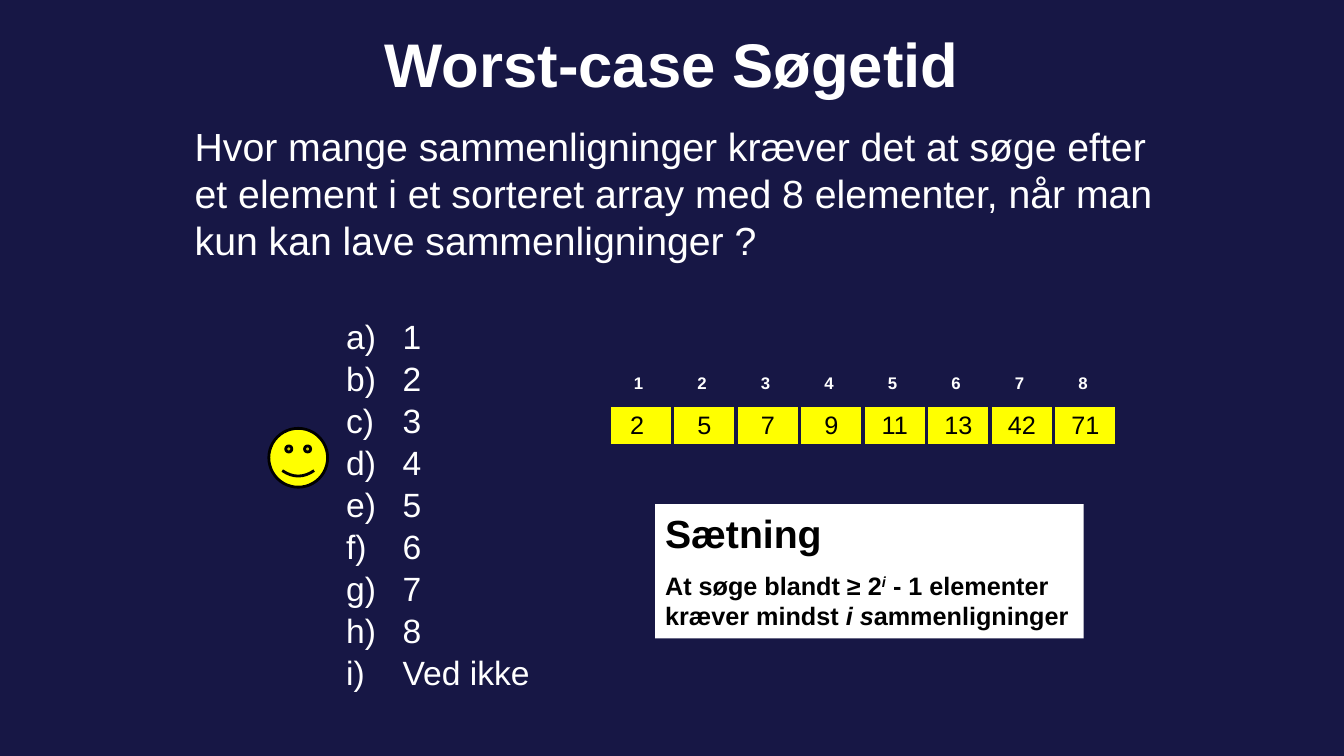
"""Build the slide on worst-case search time in a sorted array."""
import lxml.etree
import pptx
import pptx.dml.color
import pptx.enum.shapes
import pptx.enum.text
import pptx.oxml.ns
import pptx.util

NAVY = pptx.dml.color.RGBColor(0x17, 0x17, 0x45)
WHITE = pptx.dml.color.RGBColor(0xFF, 0xFF, 0xFF)
BLACK = pptx.dml.color.RGBColor(0x00, 0x00, 0x00)
YELLOW = pptx.dml.color.RGBColor(0xFF, 0xFF, 0x00)

WIDTH = pptx.util.Inches(13.33)
HEIGHT = pptx.util.Inches(7.5)
ROW = HEIGHT / 90
COLUMN = WIDTH / 160
QUESTION = (
    "Hvor mange sammenligninger kræver det at søge efter et element i et "
    "sorteret array med 8 elementer, når man kun kan lave sammenligninger ?"
)
ANSWERS = ["1", "2", "3", "4", "5", "6", "7", "8", "Ved ikke"]
ARRAY = [
    ["1 ", "2 ", "3 ", "4 ", "5 ", "6 ", "7 ", "8 "],
    ["2 ", "5", "7", "9", "11", "13", "42", "71"],
]
THEOREM = [
    ("At søge blandt ≥ 2", False, False),
    ("i", True, True),
    (" - 1 elementer kræver mindst ", False, False),
    ("i s", True, False),
    ("ammenligninger", False, False),
]


def grid(left, top, width, height):
    return (round(left * COLUMN), round(top * ROW),
            round(width * COLUMN), round(height * ROW))


def style(paragraph, size, color, bold=False, align=pptx.enum.text.PP_ALIGN.LEFT):
    paragraph.alignment = align
    paragraph.font.name = "Arial"
    paragraph.font.size = pptx.util.Pt(size)
    paragraph.font.bold = bold
    paragraph.font.color.rgb = color


presentation = pptx.Presentation()
presentation.slide_width = WIDTH
presentation.slide_height = HEIGHT
slide = presentation.slides.add_slide(presentation.slide_layouts[1])
slide.background.fill.solid()
slide.background.fill.fore_color.rgb = NAVY
center = pptx.enum.text.PP_ALIGN.CENTER
middle = pptx.enum.text.MSO_ANCHOR.MIDDLE

title = slide.shapes.title
title.left, title.top, title.width, title.height = grid(20, 0, 120, 15)
title.text_frame.text = "Worst-case Søgetid"
title.text_frame.auto_size = pptx.enum.text.MSO_AUTO_SIZE.NONE
title.text_frame.vertical_anchor = middle
style(title.text_frame.paragraphs[0], 44, WHITE, True, center)

answers = slide.placeholders[1]
answers.left, answers.top, answers.width, answers.height = grid(40, 37, 27, 45)
answers.text_frame.text = "\n".join(ANSWERS)
answers.text_frame.auto_size = pptx.enum.text.MSO_AUTO_SIZE.NONE
for paragraph in answers.text_frame.paragraphs:
    style(paragraph, 24, WHITE)
    paragraph.space_before = pptx.util.Pt(1.2)
    properties = paragraph._p.get_or_add_pPr()
    properties.set("marL", str(pptx.util.Inches(0.56)))
    properties.set("indent", str(-pptx.util.Inches(0.56)))
    lxml.etree.SubElement(
        properties, pptx.oxml.ns.qn("a:buFont"), typeface="+mj-lt")
    lxml.etree.SubElement(
        properties, pptx.oxml.ns.qn("a:buAutoNum"), type="alphaLcParenR")

smiley = slide.shapes.add_shape(
    pptx.enum.shapes.MSO_SHAPE.SMILEY_FACE, *grid(32, 51, 7, 7))
smiley.shadow.inherit = False
smiley.fill.solid()
smiley.fill.fore_color.rgb = YELLOW
smiley.line.color.rgb = BLACK
smiley.line.width = pptx.util.Pt(2)

question = slide.shapes.add_textbox(*grid(22, 14, 118, 16))
question.text_frame.word_wrap = True
question.text_frame.text = QUESTION
style(question.text_frame.paragraphs[0], 28, WHITE)

array = slide.shapes.add_table(
    2, len(ARRAY[0]), *grid(72.5, 43.2, 60.5, 9.84)).table
array.horz_banding = False
array.rows[0].height = pptx.util.Inches(0.42)
array.rows[1].height = pptx.util.Inches(0.4)
for row, values in enumerate(ARRAY):
    for column, value in enumerate(values):
        cell = array.cell(row, column)
        cell.text = value
        cell.vertical_anchor = middle
        paragraph = cell.text_frame.paragraphs[0]
        properties = cell._tc.get_or_add_tcPr()
        for side in ("lnL", "lnR", "lnT", "lnB"):
            border = lxml.etree.SubElement(
                properties, pptx.oxml.ns.qn("a:" + side), w=str(pptx.util.Pt(3)))
            fill = lxml.etree.SubElement(border, pptx.oxml.ns.qn("a:solidFill"))
            lxml.etree.SubElement(
                fill, pptx.oxml.ns.qn("a:srgbClr"), val=str(NAVY))
        if row == 0:
            cell.fill.background()
            style(paragraph, 12, WHITE, True, center)
        else:
            cell.fill.solid()
            cell.fill.fore_color.rgb = YELLOW
            style(paragraph, 18, BLACK, False, center)

theorem = slide.shapes.add_shape(
    pptx.enum.shapes.MSO_SHAPE.RECTANGLE, *grid(78, 60, 51, 16))
theorem.shadow.inherit = False
theorem.fill.solid()
theorem.fill.fore_color.rgb = WHITE
theorem.line.fill.background()
theorem.text_frame.word_wrap = True
theorem.text_frame.vertical_anchor = pptx.enum.text.MSO_ANCHOR.TOP
theorem.text_frame.text = "Sætning"
style(theorem.text_frame.paragraphs[0], 28, BLACK, True)
statement = theorem.text_frame.add_paragraph()
style(statement, 18, BLACK, True)
statement.space_before = pptx.util.Pt(10)
for text, italic, raised in THEOREM:
    run = statement.add_run()
    run.text = text
    run.font.italic = italic
    if raised:
        run._r.get_or_add_rPr().set("baseline", "30000")

presentation.save("out.pptx")
